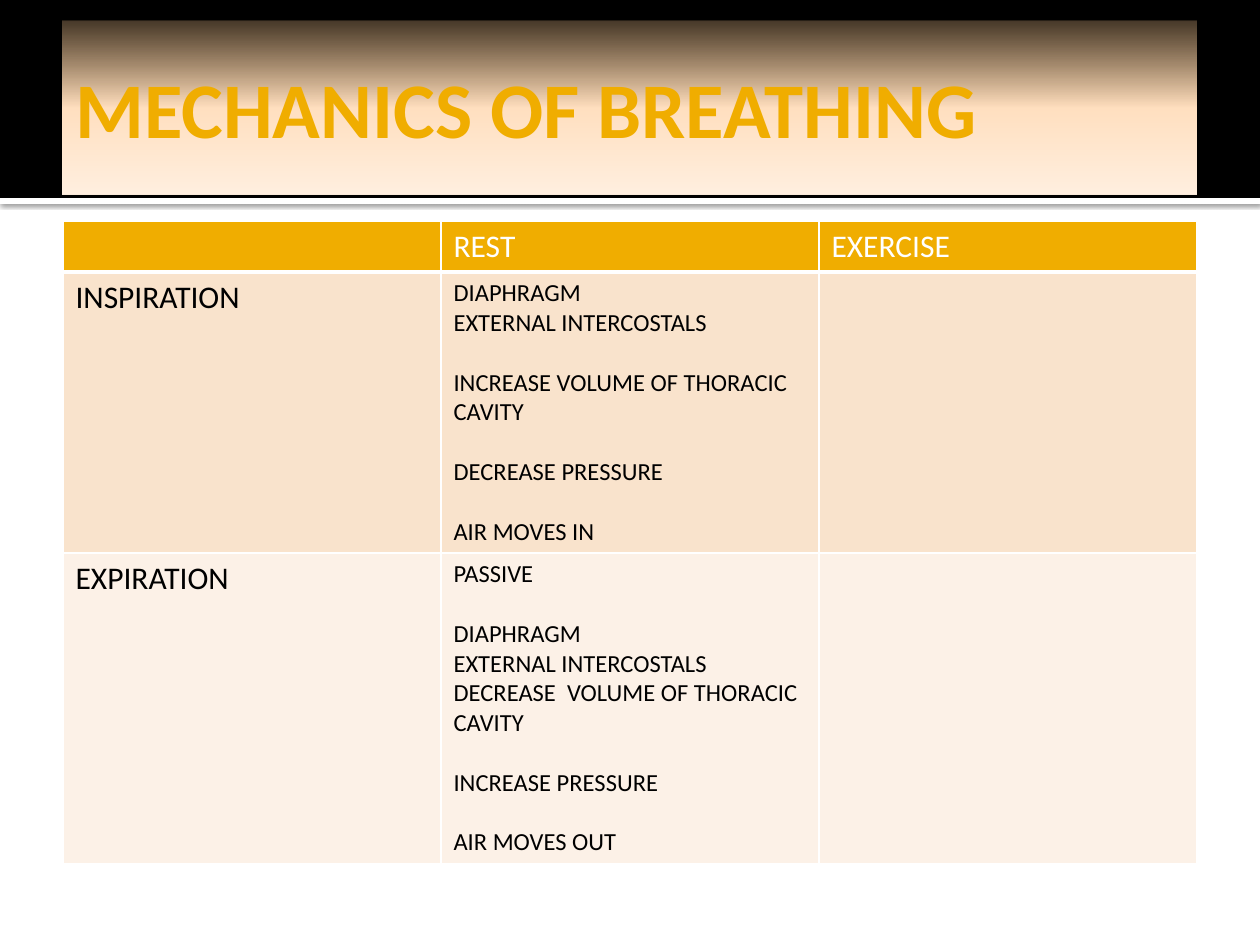
from dataclasses import dataclass

from lxml.etree import SubElement
from pptx import Presentation
from pptx.dml.color import RGBColor
from pptx.enum.shapes import MSO_SHAPE
from pptx.enum.text import MSO_ANCHOR, MSO_AUTO_SIZE, PP_ALIGN
from pptx.oxml import parse_xml
from pptx.oxml.ns import nsdecls, qn
from pptx.util import Pt

SCALE = 7257.6  # EMU in one px, 126 px to the inch


@dataclass(frozen=True)
class Theme:
    font: str = "Calibri"
    gold: str = "F0AD00"
    white: str = "FFFFFF"
    black: str = "000000"
    bands: tuple = ("F9E3CC", "FCF1E7")
    glow: tuple = ((0, "FFCF96", 27), (50, "FFDFBF", 100), (100, "FFEFE0", 100))
    head: int = 45
    label: int = 18
    body: int = 14
    gap: int = 17


THEME = Theme()

# Each cell holds groups of lines; a gap parts the groups.
ROWS = [
    [[], [["REST"]], [["EXERCISE"]]],
    [
        [["INSPIRATION"]],
        [
            ["DIAPHRAGM", "EXTERNAL INTERCOSTALS"],
            ["INCREASE VOLUME OF THORACIC CAVITY"],
            ["DECREASE PRESSURE"],
            ["AIR MOVES IN"],
        ],
        [],
    ],
    [
        [["EXPIRATION"]],
        [
            ["PASSIVE"],
            ["DIAPHRAGM", "EXTERNAL INTERCOSTALS",
             "DECREASE  VOLUME OF THORACIC CAVITY"],
            ["INCREASE PRESSURE"],
            ["AIR MOVES OUT"],
        ],
        [],
    ],
]
HEIGHTS = (51, 281, 310)


def px(count):
    return round(count * SCALE)


def rgb(code):
    return RGBColor.from_string(code)


def write(frame, groups, size, color, bold=False):
    lines = [(line, g > 0 and i == 0)
             for g, group in enumerate(groups) for i, line in enumerate(group)]
    for n, (line, apart) in enumerate(lines):
        para = frame.paragraphs[0] if n == 0 else frame.add_paragraph()
        para.alignment = PP_ALIGN.LEFT
        para.space_before = Pt(THEME.gap if apart else 0)
        run = para.add_run()
        run.text = line
        run.font.name, run.font.size, run.font.bold = THEME.font, Pt(size), bold
        run.font.color.rgb = rgb(color)


def add_bar(slide, top, height, color):
    bar = slide.shapes.add_shape(
        MSO_SHAPE.RECTANGLE, 0, px(top), px(1260), px(height))
    bar.shadow.inherit = False
    bar.fill.solid()
    bar.fill.fore_color.rgb = rgb(color)
    bar.line.fill.background()
    return bar


def cast(shape):
    """Give the shape a soft shadow below it."""
    shade = SubElement(
        shape.element.spPr.find(qn("a:effectLst")), qn("a:outerShdw"),
        blurRad=str(Pt(2.5)), dist=str(Pt(0.8)), dir="5400000",
        algn="tl", rotWithShape="0")
    tint = SubElement(shade, qn("a:srgbClr"), val=THEME.black)
    SubElement(tint, qn("a:alpha"), val="60000")


def blend(shape, stops):
    """Fill the shape from top to bottom with see-through stops."""
    marks = "".join(
        f'<a:gs pos="{pos * 1000}"><a:srgbClr val="{color}">'
        f'<a:alpha val="{alpha * 1000}"/></a:srgbClr></a:gs>'
        for pos, color, alpha in stops)
    shape.element.spPr.append(parse_xml(
        f'<a:gradFill {nsdecls("a")} rotWithShape="1"><a:gsLst>{marks}</a:gsLst>'
        '<a:lin ang="5400000" scaled="0"/></a:gradFill>'))


def set_title(slide, text):
    title = slide.shapes.title
    title.element.getparent().append(title.element)
    title.left, title.top, title.width, title.height = map(px, (63, 21, 1134, 173))
    blend(title, THEME.glow)
    frame = title.text_frame
    frame.word_wrap = True
    frame.auto_size = MSO_AUTO_SIZE.NONE
    frame.vertical_anchor = MSO_ANCHOR.MIDDLE
    frame.margin_left = Pt(7.2)
    frame.margin_right = frame.margin_top = frame.margin_bottom = Pt(3.6)
    write(frame, [[text]], size=THEME.head, color=THEME.gold, bold=True)


def edge(cell, base):
    props = cell._tc.get_or_add_tcPr()
    for side, width in (("L", 1), ("R", 1), ("T", 1), ("B", base)):
        line = SubElement(props, qn(f"a:ln{side}"), w=str(Pt(width)))
        fill = SubElement(line, qn("a:solidFill"))
        SubElement(fill, qn("a:srgbClr"), val=THEME.white)


def add_grid(slide, rows, heights):
    table = slide.shapes.add_table(
        len(rows), len(rows[0]), px(63), px(221), px(1134), px(sum(heights))).table
    table.horz_banding = table.first_row = False
    for r, row in enumerate(rows):
        table.rows[r].height = px(heights[r])
        top = r == 0
        for c, groups in enumerate(row):
            cell = table.cell(r, c)
            edge(cell, 3 if top else 1)
            cell.fill.solid()
            cell.fill.fore_color.rgb = rgb(THEME.gold if top else THEME.bands[r - 1])
            write(cell.text_frame, groups,
                  size=THEME.label if top or c == 0 else THEME.body,
                  color=THEME.white if top else THEME.black)


def main():
    deck = Presentation()
    deck.slide_width, deck.slide_height = px(1260), px(945)
    slide = deck.slides.add_slide(deck.slide_layouts[5])
    cast(add_bar(slide, 198, 6, THEME.white))
    add_bar(slide, 0, 198, THEME.black)
    set_title(slide, "MECHANICS OF BREATHING")
    add_grid(slide, ROWS, HEIGHTS)
    deck.save("out.pptx")


if __name__ == "__main__":
    main()
